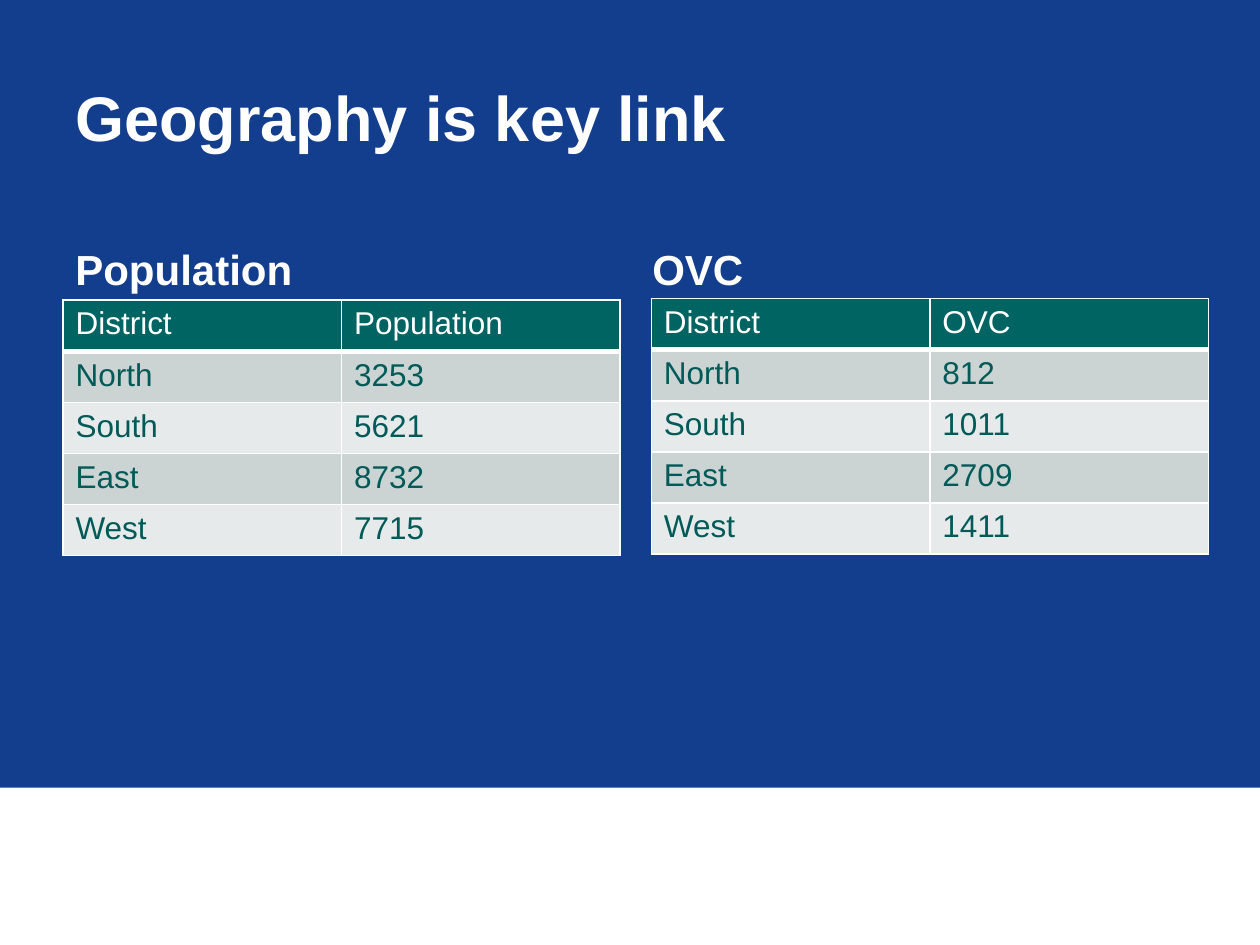
from pptx import Presentation
from pptx import util as u
from pptx.dml.color import RGBColor
from pptx.enum import shapes, text
from pptx.oxml import parse_xml
from pptx.oxml.ns import nsdecls

FONT = "Arial"
HUES = {
    "back": "133D8D",
    "white": "FFFFFF",
    "head": "006462",
    "ink": "005A58",
    "dark": "CCD3D3",
    "light": "E7EAEA",
}
LEFT = 1.27
WIDE = 11.23
ROW = 1.03
PEOPLE = [("District", "Population"), ("North", "3253"), ("South", "5621"),
          ("East", "8732"), ("West", "7715")]
OVC = [("District", "OVC"), ("North", "812"), ("South", "1011"),
       ("East", "2709"), ("West", "1411")]


def paint(fill, hue):
    fill.solid()
    fill.fore_color.rgb = RGBColor.from_string(HUES[hue])


def write(frame, words, size, hue="white", bold=False):
    run = frame.paragraphs[0].add_run()
    run.text = words
    run.font.name = FONT
    run.font.size = u.Pt(size)
    run.font.bold = bold
    run.font.color.rgb = RGBColor.from_string(HUES[hue])


def add_band(slide, top, width, height):
    band = slide.shapes.add_shape(shapes.MSO_SHAPE.RECTANGLE, u.Cm(0), u.Cm(top),
                                  width, u.Cm(height))
    band.shadow.inherit = False
    paint(band.fill, "white")
    band.line.fill.background()


def add_label(slide, words, place, size, anchor):
    box = slide.shapes.add_textbox(*(u.Cm(n) for n in place))
    frame = box.text_frame
    frame.word_wrap = True
    frame.vertical_anchor = anchor
    write(frame, words, size, bold=True)


def add_edges(cell, under):
    """Draw white cell borders, with the bottom one `under` points wide."""
    props = cell._tc.get_or_add_tcPr()
    for side, width in (("L", 1), ("R", 1), ("T", 1), ("B", under)):
        props.append(parse_xml(
            f'<a:ln{side} {nsdecls("a")} w="{u.Pt(width)}"><a:solidFill>'
            f'<a:srgbClr val="{HUES["white"]}"/></a:solidFill></a:ln{side}>'))


def add_grid(slide, data, left, top):
    cols = len(data[0])
    table = slide.shapes.add_table(len(data), cols, u.Cm(left), u.Cm(top),
                                   u.Cm(WIDE), u.Cm(ROW * len(data))).table
    for col in table.columns:
        col.width = u.Cm(WIDE / cols)
    for r, row in enumerate(data):
        table.rows[r].height = u.Cm(ROW)
        shade = "head" if r == 0 else "dark" if r % 2 else "light"
        for c, words in enumerate(row):
            cell = table.cell(r, c)
            add_edges(cell, 1 if r else 3)
            paint(cell.fill, shade)
            write(cell.text_frame, words, 18, "ink" if r else "white")


def main():
    deck = Presentation()
    deck.slide_width, deck.slide_height = u.Cm(25.4), u.Cm(19.05)
    slide = deck.slides.add_slide(deck.slide_layouts[6])
    paint(slide.background.fill, "back")
    add_band(slide, 15.88, deck.slide_width, 3.17)
    add_label(slide, "Geography is key link", (LEFT, 0.76, 22.86, 3.18), 36,
              text.MSO_ANCHOR.MIDDLE)
    for name, data, x, left, top in (("Population", PEOPLE, LEFT, LEFT, 6.05),
                                     ("OVC", OVC, 12.9, 13.13, 6.02)):
        add_label(slide, name, (x, 4.27, WIDE, 1.78), 24, text.MSO_ANCHOR.BOTTOM)
        add_grid(slide, data, left, top)
    deck.save("out.pptx")


if __name__ == "__main__":
    main()
